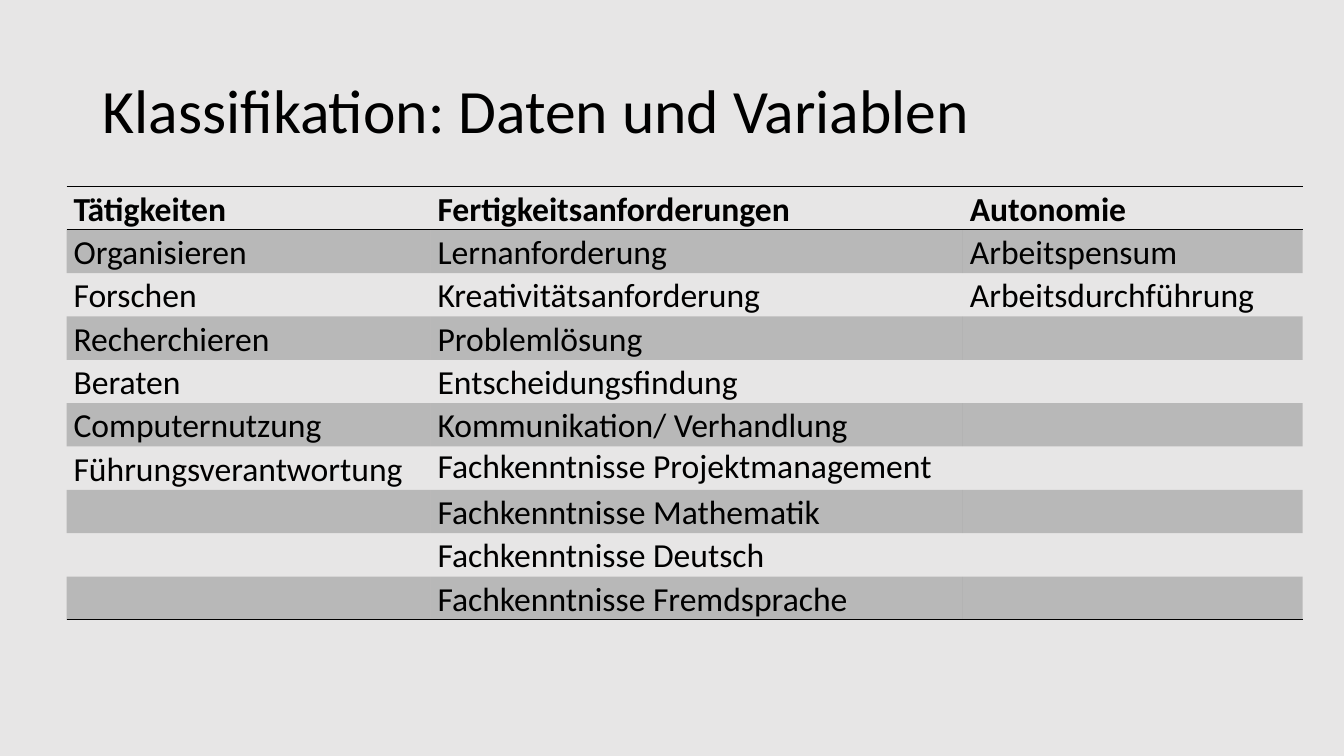
from lxml import etree
from pptx import Presentation
from pptx.dml.color import RGBColor
from pptx.enum import text
from pptx.oxml import ns
from pptx.util import Inches, Pt

TITLE = "Klassifikation: Daten und Variablen"
TABLE = {
    "Tätigkeiten": ["Organisieren", "Forschen", "Recherchieren", "Beraten",
                    "Computernutzung", "Führungsverantwortung"],
    "Fertigkeitsanforderungen": [
        "Lernanforderung", "Kreativitätsanforderung", "Problemlösung",
        "Entscheidungsfindung", "Kommunikation/ Verhandlung",
        "Fachkenntnisse Projektmanagement", "Fachkenntnisse Mathematik",
        "Fachkenntnisse Deutsch", "Fachkenntnisse Fremdsprache"],
    "Autonomie": ["Arbeitspensum", "Arbeitsdurchführung"],
}
SINGLE = "Fachkenntnisse Projektmanagement"  # the one cell with single spacing
WIDTHS = [3.61, 5.28, 3.37]
ROW = 0.43
COLORS = {"back": "E7E6E6", "ink": "000000"}
BAND = 20  # opacity of the shaded rows in percent
PLAIN = "{2D5ABB26-0587-4C30-8999-92F81FD0307C}"  # table style without grid
INSETS = {"margin_left": Inches(0.07), "margin_right": Inches(0.07),
          "margin_top": 0, "margin_bottom": 0}


def write(par, words, size, bold=False, gap=None):
    run = par.add_run()
    run.text = words
    look = {"name": "Calibri", "size": Pt(size), "bold": bold}
    for key, val in look.items():
        setattr(run.font, key, val)
    run.font.color.rgb = RGBColor.from_string(COLORS["ink"])
    if gap:
        par.line_spacing = gap


def rule(cell, side):
    """Draw a 1 pt border on side T or B; call before filling the cell."""
    props = cell._tc.get_or_add_tcPr()
    line = etree.SubElement(props, ns.qn("a:ln" + side), w=str(Pt(1)))
    fill = etree.SubElement(line, ns.qn("a:solidFill"))
    etree.SubElement(fill, ns.qn("a:srgbClr"), val=COLORS["ink"])


def shade(cell):
    cell.fill.solid()
    cell.fill.fore_color.rgb = RGBColor.from_string(COLORS["ink"])
    color = cell._tc.tcPr.find(".//" + ns.qn("a:solidFill") + "[last()]")
    color = cell._tc.tcPr.find(ns.qn("a:solidFill"))[0]
    etree.SubElement(color, ns.qn("a:alpha"), val=str(BAND * 1000))


def add_title(slide):
    box = slide.shapes.add_textbox(*map(Inches, (0.92, 0.4, 11.5, 1.45)))
    frame = box.text_frame
    frame.word_wrap = True
    frame.vertical_anchor = text.MSO_ANCHOR.MIDDLE
    write(frame.paragraphs[0], TITLE, 44, gap=0.9)


def add_grid(slide):
    rows = 1 + max(map(len, TABLE.values()))
    place = map(Inches, (0.66, 1.85, sum(WIDTHS), rows * ROW))
    grid = slide.shapes.add_table(rows, len(TABLE), *place).table
    grid._tbl.tblPr.find(ns.qn("a:tableStyleId")).text = PLAIN
    for row in grid.rows:
        row.height = Inches(ROW)
    for c, (head, items) in enumerate(TABLE.items()):
        grid.columns[c].width = Inches(WIDTHS[c])
        words = [head] + items
        for r in range(rows):
            cell = grid.cell(r, c)
            for key, val in INSETS.items():
                setattr(cell, key, val)
            if r == 0:
                rule(cell, "T")
            if r in (0, rows - 1):
                rule(cell, "B")
            if r % 2:
                shade(cell)
            else:
                cell.fill.background()
            if r < len(words):
                gap = None if words[r] == SINGLE else 1.07
                par = cell.text_frame.paragraphs[0]
                write(par, words[r], 24, r == 0, gap)


def main():
    deck = Presentation()
    deck.slide_width, deck.slide_height = Inches(13.33), Inches(7.5)
    slide = deck.slides.add_slide(deck.slide_layouts[6])
    back = slide.background.fill
    back.solid()
    back.fore_color.rgb = RGBColor.from_string(COLORS["back"])
    add_title(slide)
    add_grid(slide)
    deck.save("out.pptx")


if __name__ == "__main__":
    main()
